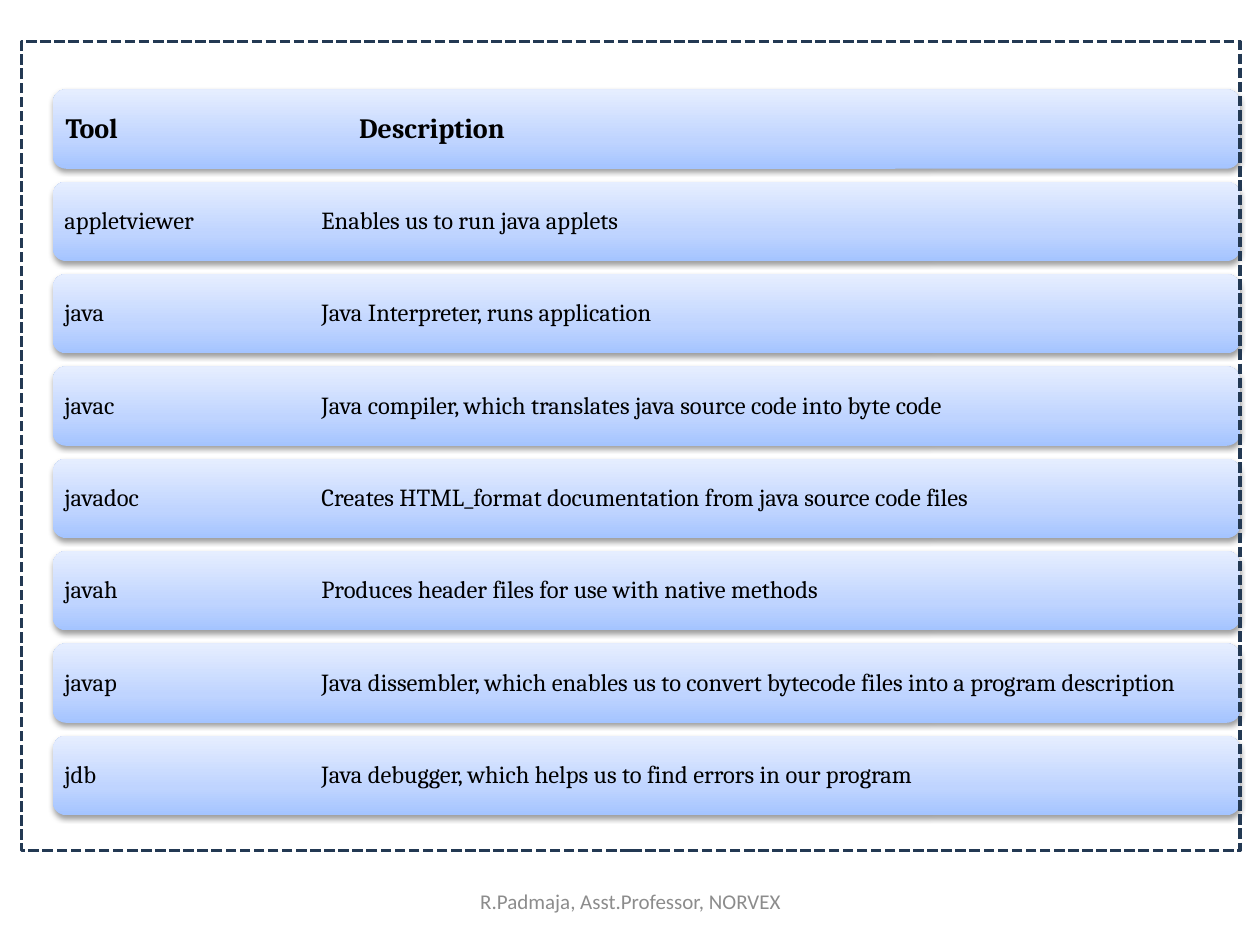
"""Build a slide listing the Java development tools and their descriptions."""
from dataclasses import dataclass

from pptx import Presentation
from pptx.dml.color import RGBColor
from pptx.enum.dml import MSO_LINE
from pptx.enum.shapes import MSO_SHAPE
from pptx.enum.text import MSO_ANCHOR, PP_ALIGN
from pptx.oxml import parse_xml
from pptx.oxml.ns import nsdecls
from pptx.slide import Slide
from pptx.util import Inches, Pt

RECT = MSO_SHAPE.RECTANGLE
ROUND_RECT = MSO_SHAPE.ROUNDED_RECTANGLE
SYS_DASH = MSO_LINE.SQUARE_DOT
MIDDLE = MSO_ANCHOR.MIDDLE
LEFT, CENTER = PP_ALIGN.LEFT, PP_ALIGN.CENTER


@dataclass(frozen=True)
class Theme:
    body_font: str = "Cambria"
    footer_font: str = "Calibri"
    header_size: int = 16
    row_size: int = 14
    footer_size: int = 12
    text: str = "000000"
    footer: str = "8C8C8C"
    frame: str = "233953"
    shadow: str = "000000"
    gradient: tuple[tuple[int, str], ...] = (
        (0, "A4C4FF"), (35, "BFD4FF"), (100, "E6EEFF"))


@dataclass(frozen=True)
class ToolRow:
    tool: str
    description: str
    size: int
    bold: bool = False
    inset: float = 0.06
    tab: float = 2.04


THEME = Theme()
ROW_LEFT, ROW_WIDTH, ROW_HEIGHT = 0.42, 9.42, 0.63
FIRST_TOP, LAST_TOP = 0.71, 5.84

TOOLS = {
    "appletviewer": "Enables us to run java applets",
    "java": "Java Interpreter, runs application",
    "javac": "Java compiler, which translates java source code into byte code",
    "javadoc": "Creates HTML_format documentation from java source code files",
    "javah": "Produces header files for use with native methods",
    "javap": "Java dissembler, which enables us to convert bytecode files "
             "into a program description",
    "jdb": "Java debugger, which helps us to find errors in our program",
}
ROWS = [
    ToolRow("Tool", "Description", THEME.header_size, True, 0.07, 2.33),
    *(ToolRow(t, d, THEME.row_size) for t, d in TOOLS.items()),
]


def style_text(p, font: str, size: int, color: str, bold: bool = False) -> None:
    for r in p.runs:
        r.font.name = font
        r.font.size = Pt(size)
        r.font.bold = bold
        r.font.color.rgb = RGBColor.from_string(color)


def style_bar(s) -> None:
    s.line.fill.background()
    s.shadow.inherit = False
    stops = "".join(
        f'<a:gs pos="{pos * 1000}"><a:srgbClr val="{color}"/></a:gs>'
        for pos, color in THEME.gradient)
    sp_pr = s._element.spPr
    sp_pr.find("{*}ln").addprevious(parse_xml(
        f'<a:gradFill {nsdecls("a")} rotWithShape="1"><a:gsLst>{stops}</a:gsLst>'
        '<a:lin ang="16200000" scaled="0"/></a:gradFill>'))
    sp_pr.find("{*}effectLst").append(parse_xml(
        f'<a:outerShdw {nsdecls("a")} blurRad="{Pt(3.1)}" dist="{Pt(1.6)}" '
        f'dir="5400000" rotWithShape="0"><a:srgbClr val="{THEME.shadow}">'
        '<a:alpha val="38000"/></a:srgbClr></a:outerShdw>'))


def add_tool_row(slide: Slide, row: ToolRow, top: float) -> None:
    s = slide.shapes.add_shape(ROUND_RECT, Inches(ROW_LEFT), Inches(top),
                               Inches(ROW_WIDTH), Inches(ROW_HEIGHT))
    style_bar(s)
    tf = s.text_frame
    tf.word_wrap = True
    tf.vertical_anchor = MIDDLE
    tf.margin_left = tf.margin_right = Inches(row.inset)
    tf.margin_top = tf.margin_bottom = Inches(row.inset)
    tf.text = f"{row.tool}\t{row.description}"
    p = tf.paragraphs[0]
    p.alignment = LEFT
    p.line_spacing = 0.9
    p._p.get_or_add_pPr().append(parse_xml(
        f'<a:tabLst {nsdecls("a")}><a:tab pos="{Inches(row.tab)}" algn="l"/>'
        '</a:tabLst>'))
    style_text(p, THEME.body_font, row.size, THEME.text, row.bold)


def add_footer(slide: Slide, text: str) -> None:
    s = slide.shapes.add_textbox(Inches(3.42), Inches(6.95),
                                 Inches(3.17), Inches(0.4))
    tf = s.text_frame
    tf.word_wrap = True
    tf.vertical_anchor = MIDDLE
    tf.text = text
    p = tf.paragraphs[0]
    p.alignment = CENTER
    style_text(p, THEME.footer_font, THEME.footer_size, THEME.footer)


def add_frame(slide: Slide) -> None:
    s = slide.shapes.add_shape(RECT, Inches(0.17), Inches(0.33),
                               Inches(9.67), Inches(6.42))
    s.shadow.inherit = False
    s.fill.background()
    s.line.color.rgb = RGBColor.from_string(THEME.frame)
    s.line.width = Pt(2)
    s.line.dash_style = SYS_DASH


def main() -> None:
    prs = Presentation()
    prs.slide_width, prs.slide_height = Inches(10), Inches(7.5)
    slide = prs.slides.add_slide(prs.slide_layouts[6])
    pitch = (LAST_TOP - FIRST_TOP) / (len(ROWS) - 1)
    for i, row in enumerate(ROWS):
        add_tool_row(slide, row, FIRST_TOP + i * pitch)
    add_footer(slide, "R.Padmaja, Asst.Professor, NORVEX")
    add_frame(slide)
    prs.save("out.pptx")


if __name__ == "__main__":
    main()
